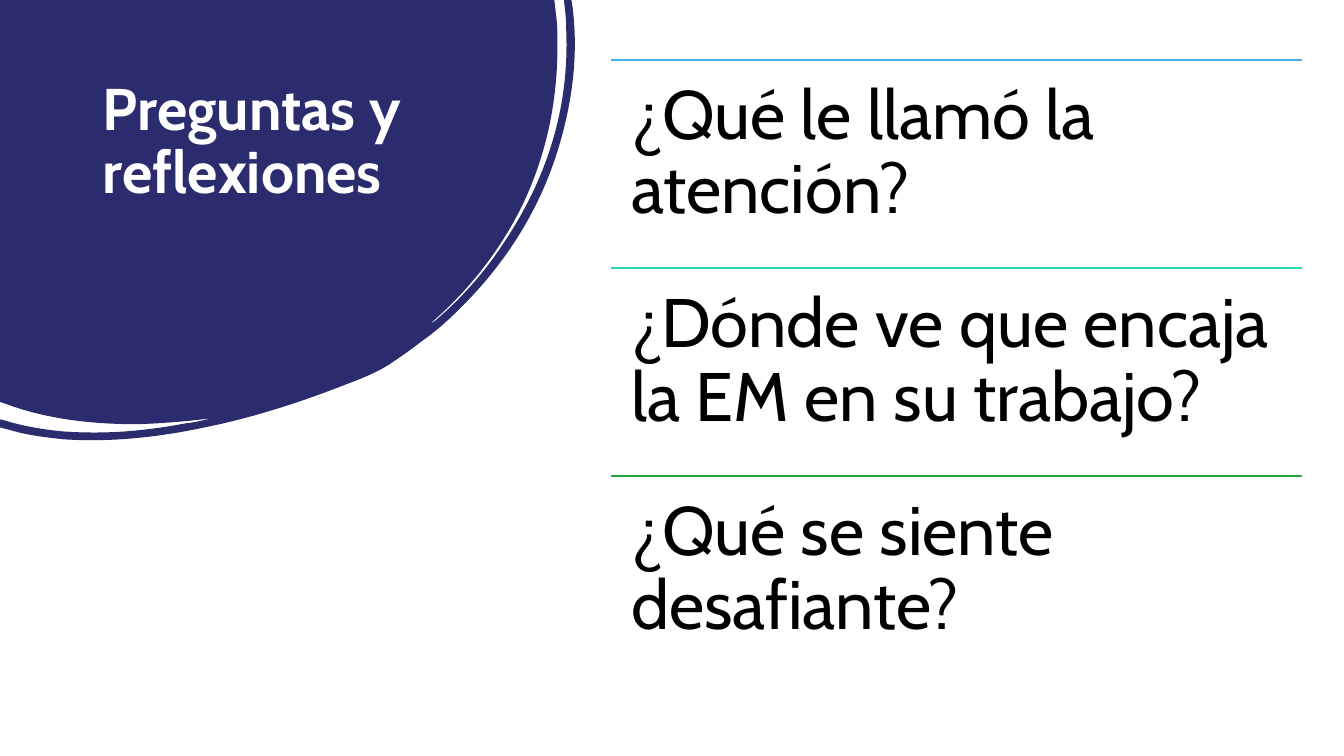
from dataclasses import dataclass
from lxml.etree import SubElement
from pptx import Presentation
from pptx.dml.color import RGBColor
from pptx.enum.shapes import MSO_CONNECTOR
from pptx.enum.text import MSO_ANCHOR, MSO_AUTO_SIZE, PP_ALIGN
from pptx.oxml.ns import qn
from pptx.util import Cm, Pt


@dataclass(frozen=True)
class Theme:
    font: str = "Cabin"
    navy: str = "2B2C6D"
    white: str = "FFFFFF"
    black: str = "000000"
    rules: tuple = ("46AEEA", "26D9AD", "28A53A")
    title_size: int = 42
    question_size: int = 49
    rule_width: float = 1.5


theme = Theme()


def write(frame, words, size, color, bold):
    frame.word_wrap = True
    frame.auto_size = MSO_AUTO_SIZE.NONE
    frame.vertical_anchor = MSO_ANCHOR.TOP
    paragraph = frame.paragraphs[0]
    paragraph.alignment = PP_ALIGN.LEFT
    paragraph.line_spacing = 0.9
    run = paragraph.add_run()
    run.text = words
    run.font.name = theme.font
    run.font.size = Pt(size)
    run.font.bold = bold
    run.font.color.rgb = RGBColor.from_string(color)


deck = Presentation()
deck.slide_width, deck.slide_height = Cm(33.87), Cm(19.05)
slide = deck.slides.add_slide(deck.slide_layouts[5])
slide.background.fill.solid()
slide.background.fill.fore_color.rgb = RGBColor.from_string(theme.white)

blob_segments = (
    ((13.97, 0),),
    ((14.02, 0.43),),
    ((14.05, 0.66), (14.05, 0.91), (14.05, 1.14)),
    ((14.05, 2.57), (13.77, 3.91), (13.16, 5.18)),
    ((12.6, 6.32), (11.81, 7.32), (10.85, 8.15)),
    ((10.9, 8.15), (10.92, 8.1), (10.97, 8.08)),
    ((11.66, 7.49), (12.24, 6.83), (12.73, 6.07)),
    ((13.79, 4.47), (14.35, 2.72), (14.27, 0.76)),
    ((14.27, 0.53), (14.25, 0.3), (14.22, 0.08)),
    ((14.22, 0),),
    ((14.4, 0),),
    ((14.43, 0.18),),
    ((14.58, 1.37), (14.43, 2.59), (14.05, 3.81)),
    ((13.54, 5.44), (12.62, 6.81), (11.38, 7.98)),
    ((11.15, 8.2), (10.9, 8.41), (10.64, 8.59)),
    ((10.39, 8.79), (10.13, 8.97), (9.83, 9.17)),
    ((9.53, 9.37), (9.14, 9.53), (8.74, 9.68)),
    ((7.59, 10.13), (6.4, 10.52), (5.16, 10.77)),
    ((3.99, 11.02), (2.79, 11.15), (1.6, 11.07)),
    ((1.14, 11.02), (0.71, 10.97), (0.3, 10.85)),
    ((0, 10.77),),
    ((0, 10.57),),
    ((0.1, 10.59),),
    ((0.58, 10.74), (1.07, 10.82), (1.55, 10.87)),
    ((2.62, 10.95), (3.63, 10.87), (4.67, 10.67)),
    ((4.85, 10.65), (5.03, 10.62), (5.33, 10.54)),
    ((4.72, 10.62), (4.09, 10.67), (3.45, 10.69)),
    ((2.34, 10.69), (1.22, 10.57), (0.18, 10.19)),
    ((0, 10.13),),
)
builder = slide.shapes.build_freeform(0, 0)
builder.add_line_segments([(Cm(x), Cm(y)) for *_, (x, y) in blob_segments], close=True)
blob = builder.convert_to_shape()
for straight, segment in zip(list(blob.element.iter(qn("a:lnTo"))), blob_segments):
    if len(segment) == 3:
        bend = straight.makeelement(qn("a:cubicBezTo"))
        for x, y in segment:
            SubElement(bend, qn("a:pt"), x=str(Cm(x)), y=str(Cm(y)))
        straight.getparent().replace(straight, bend)
blob.width, blob.height = Cm(14.5), Cm(11.1)
for outline in blob.element.iter(qn("a:path")):
    outline.set("w", str(blob.width))
    outline.set("h", str(blob.height))
blob.shadow.inherit = False
blob.fill.solid()
blob.fill.fore_color.rgb = RGBColor.from_string(theme.navy)
blob.line.fill.background()

heading = slide.shapes.title
heading.left, heading.top, heading.width, heading.height = Cm(2.34), Cm(1.88), Cm(8.94), Cm(5.64)
write(heading.text_frame, "Preguntas y reflexiones", theme.title_size, theme.white, True)
heading.element.addprevious(blob.element)

questions = (
    ("¿Qué le llamó la atención?", 17.17),
    ("¿Dónde ve que encaja la EM en su trabajo?", 17.42),
    ("¿Qué se siente desafiante?", 17.42),
)
left, first_top, rule_length, pitch = Cm(15.4), Cm(1.52), Cm(17.42), Cm(5.24)
for row, ((question, question_width), rule_color) in enumerate(zip(questions, theme.rules)):
    top = first_top + row * pitch
    rule = slide.shapes.add_connector(MSO_CONNECTOR.STRAIGHT, left, top, left + rule_length, top)
    rule.line.color.rgb = RGBColor.from_string(rule_color)
    rule.line.width = Pt(theme.rule_width)
    SubElement(rule.element.spPr, qn("a:effectLst"))

    prompt = slide.shapes.add_textbox(left, top, Cm(question_width), pitch).text_frame
    prompt.margin_left = prompt.margin_right = prompt.margin_top = prompt.margin_bottom = Cm(0.51)
    write(prompt, question, theme.question_size, theme.black, False)

deck.save("out.pptx")
